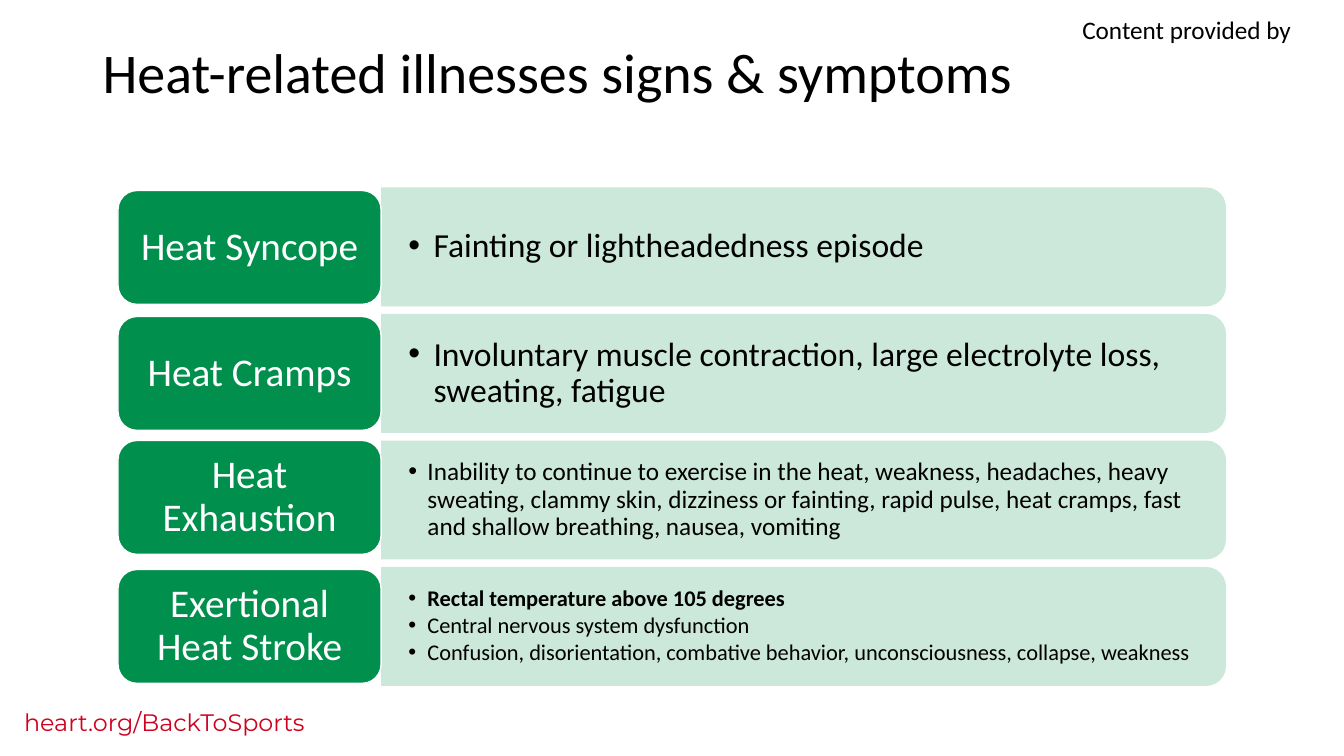
from lxml.etree import SubElement
from pptx import Presentation
from pptx.dml.color import RGBColor
from pptx.enum.shapes import MSO_SHAPE
from pptx.enum.text import MSO_ANCHOR, PP_ALIGN
from pptx.oxml.ns import qn
from pptx.util import Inches, Pt

GREEN, WHITE, BLACK, RED = "008F4C", "FFFFFF", "000000", "D0011E"


def color(hex_code):
    return RGBColor.from_string(hex_code)


def write(box, lines, size, hex_code, font="Calibri", align=PP_ALIGN.LEFT,
          spacing=1.0, gap=0, indent=None, bold_first=False):
    frame = box.text_frame
    frame.word_wrap = True
    for number, line in enumerate(lines):
        para = frame.paragraphs[0] if number == 0 else frame.add_paragraph()
        para.alignment = align
        para.line_spacing = spacing
        if number:
            para.space_before = Pt(gap)
        if indent:
            para.level = 1
            properties = para._p.get_or_add_pPr()
            properties.set("marL", str(Inches(indent)))
            properties.set("indent", str(-Inches(indent)))
            SubElement(properties, qn("a:buFont"), typeface="Arial")
            SubElement(properties, qn("a:buChar"), char="•")
        span = para.add_run()
        span.text = line
        span.font.name = font
        span.font.size = Pt(size)
        span.font.bold = bold_first and number == 0
        span.font.color.rgb = color(hex_code)


deck = Presentation()
deck.slide_width, deck.slide_height = Inches(13.33), Inches(7.5)
page = deck.slides.add_slide(deck.slide_layouts[6])
shapes = page.shapes

# Footer address, credit line and title
footer = shapes.add_textbox(Inches(0.14), Inches(6.97), Inches(4.33), Inches(0.39))
write(footer, ["heart.org/BackToSports"], 17, RED, font="Montserrat")
credit = shapes.add_textbox(Inches(10.38), Inches(0.09), Inches(2.78), Inches(0.4))
write(credit, ["Content provided by"], 18, BLACK, align=PP_ALIGN.CENTER)
title = shapes.add_textbox(Inches(0.92), Inches(0.4), Inches(10.16), Inches(0.83))
write(title, ["Heat-related illnesses signs & symptoms"], 40, BLACK, spacing=0.9)

# Each illness: label top, label lines, symptom size, bullet indent, symptoms
illnesses = [
    (1.89, ["Heat Syncope"], 24, 0.25, ["Fainting or lightheadedness episode"]),
    (3.14, ["Heat Cramps"], 24, 0.25,
     ["Involuntary muscle contraction, large electrolyte loss, sweating, fatigue"]),
    (4.37, ["Heat Exhaustion"], 18, 0.19,
     ["Inability to continue to exercise in the heat, weakness, headaches, heavy "
      "sweating, clammy skin, dizziness or fainting, rapid pulse, heat cramps, "
      "fast and shallow breathing, nausea, vomiting"]),
    (5.65, ["Exertional", "Heat Stroke"], 16, 0.19,
     ["Rectal temperature above 105 degrees",
      "Central nervous system dysfunction",
      "Confusion, disorientation, combative behavior, unconsciousness, collapse, "
      "weakness"]),
]
FIRST_TOP, ROW_STEP = 1.86, 1.255
PANEL_LEFT, PANEL_LENGTH, PANEL_DEPTH = 3.78, 8.38, 1.18

for row, (label_top, label_lines, size, indent, symptoms) in enumerate(illnesses):
    top = FIRST_TOP + row * ROW_STEP

    # Pale panel, turned so that its rounded corners face right
    panel = shapes.add_shape(
        MSO_SHAPE.ROUND_2_SAME_RECTANGLE,
        Inches(PANEL_LEFT + (PANEL_LENGTH - PANEL_DEPTH) / 2),
        Inches(top + (PANEL_DEPTH - PANEL_LENGTH) / 2),
        Inches(PANEL_DEPTH), Inches(PANEL_LENGTH))
    panel.rotation = 90
    panel.shadow.inherit = False
    panel.fill.solid()
    panel.fill.fore_color.rgb = color(GREEN)
    tint = panel._element.spPr.find(qn("a:solidFill"))[0]
    SubElement(tint, qn("a:alpha"), val="20000")
    panel.line.fill.background()

    # Symptoms
    box = shapes.add_textbox(Inches(PANEL_LEFT), Inches(top + 0.06),
                             Inches(8.33), Inches(1.06))
    frame = box.text_frame
    frame.vertical_anchor = MSO_ANCHOR.MIDDLE
    frame.margin_left = frame.margin_right = Inches(0.27)
    frame.margin_top = frame.margin_bottom = Inches(0.14)
    write(box, symptoms, size, BLACK, spacing=0.9, gap=2, indent=indent,
          bold_first=len(symptoms) > 1)

    # Illness label
    label = shapes.add_shape(MSO_SHAPE.ROUNDED_RECTANGLE, Inches(1.17),
                             Inches(label_top), Inches(2.61), Inches(1.13))
    label.shadow.inherit = False
    label.fill.solid()
    label.fill.fore_color.rgb = color(GREEN)
    label.line.color.rgb = color(WHITE)
    label.line.width = Pt(1)
    frame = label.text_frame
    frame.vertical_anchor = MSO_ANCHOR.MIDDLE
    frame.margin_left = frame.margin_right = Inches(0.12)
    frame.margin_top = frame.margin_bottom = Inches(0.06)
    write(label, label_lines, 28, WHITE, align=PP_ALIGN.CENTER, spacing=0.9, gap=0.4)

deck.save("out.pptx")
